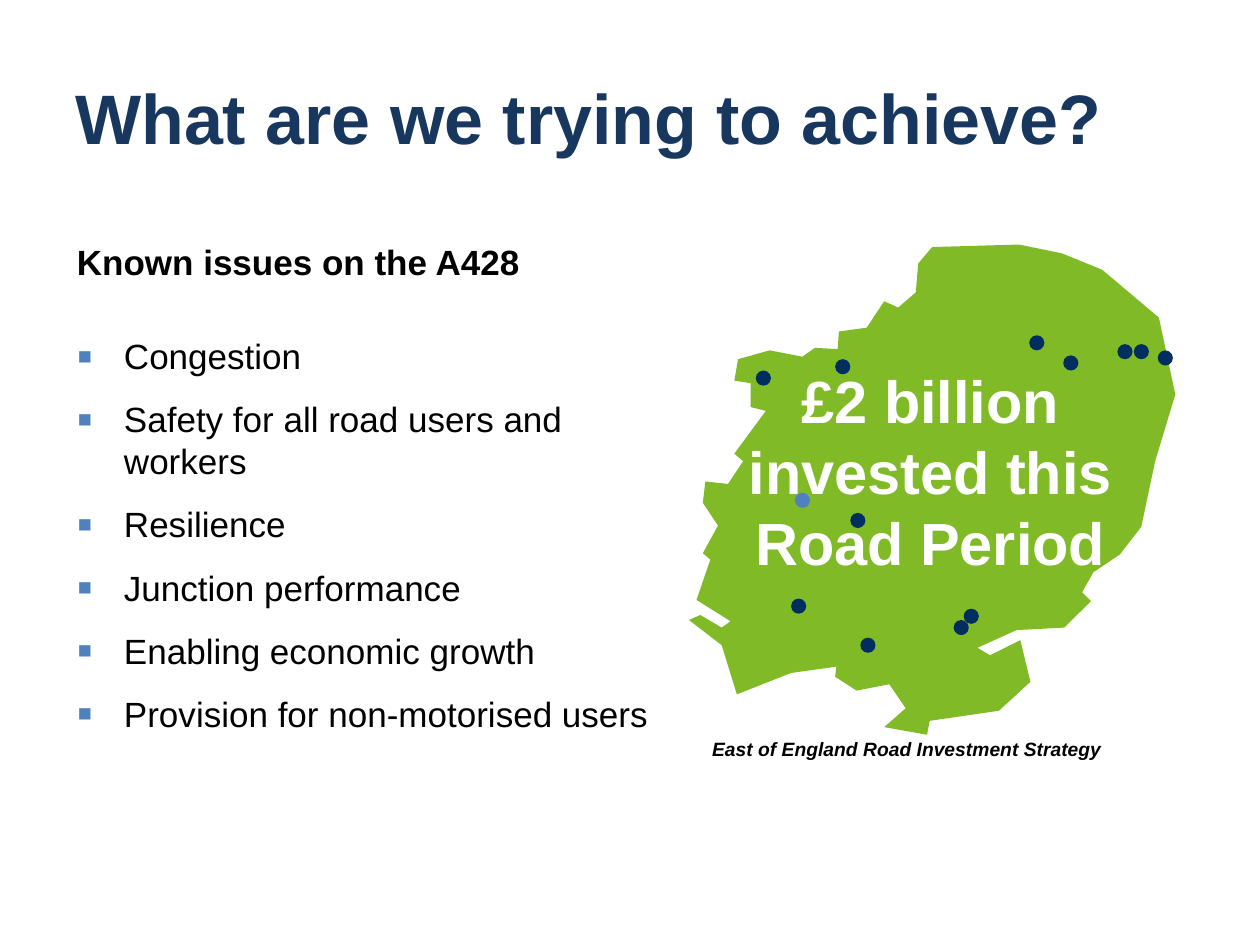
from lxml import etree
from pptx import Presentation
from pptx import util as u
from pptx.dml.color import RGBColor
from pptx.enum import shapes, text
from pptx.oxml.ns import qn

FONT = "Arial"
NAVY, BLUE, GREEN, DOT = "17375E", "4F81BD", "80BA27", "002E5F"
BLACK, WHITE = "000000", "FFFFFF"
UNIT = u.Cm(2.54) / 100

ISSUES = [
    "Congestion",
    "Safety for all road users and workers",
    "Resilience",
    "Junction performance",
    "Enabling economic growth",
    "Provision for non-motorised users",
]

OUTLINE = [
    (36, 108), (39, 91), (64, 84), (90, 89), (100, 82), (118, 83), (119, 69), (141, 66),
    (155, 45), (166, 50), (180, 38), (182, 15), (193, 2), (262, 0), (296, 7), (328, 20),
    (373, 58), (386, 119), (370, 172), (359, 224), (342, 246), (321, 260), (312, 276),
    (319, 283), (298, 304), (260, 306), (229, 320), (239, 326), (263, 314), (271, 347),
    (246, 370), (191, 378), (189, 389), (155, 383), (172, 368), (159, 349), (133, 354),
    (116, 343), (117, 335), (81, 340), (38, 357), (26, 318), (0, 298), (9, 294),
    (26, 304), (33, 299), (6, 282), (17, 250), (11, 245), (23, 223), (11, 205),
    (13, 188), (31, 190), (43, 172), (36, 166), (61, 132), (49, 129), (49, 110),
]

SCHEMES = [
    (270, 72), (340, 79), (353, 79), (372, 84), (297, 88), (116, 91), (53, 100),
    (128, 213), (136, 312), (81, 281), (210, 298), (218, 289),
]
A428 = (84, 197)


def color(value):
    """Turn a hex string into a colour."""
    return RGBColor.from_string(value)


def box(*lengths):
    """Turn centimetres into left, top, width and height."""
    return [u.Cm(n) for n in lengths]


def paint(sp, fill):
    """Give a shape a flat fill without line or shadow."""
    sp.shadow.inherit = False
    sp.fill.solid()
    sp.fill.fore_color.rgb = color(fill)
    sp.line.fill.background()


def write(p, words, size=20, fill=BLACK, bold=False, italic=False,
          align=text.PP_ALIGN.LEFT, before=0, after=0):
    """Write formatted text into a paragraph."""
    p.alignment = align
    p.space_before, p.space_after = u.Pt(before), u.Pt(after)
    r = p.add_run()
    r.text = words
    f = r.font
    f.name, f.size, f.bold, f.italic = FONT, u.Pt(size), bold, italic
    f.color.rgb = color(fill)


def add_frame(parent, area, anchor=text.MSO_ANCHOR.TOP, inset=None):
    """Add a wrapping text box and return its text frame."""
    tf = parent.add_textbox(*area).text_frame
    tf.word_wrap = True
    tf.vertical_anchor = anchor
    if inset is not None:
        tf.margin_left = tf.margin_right = tf.margin_top = tf.margin_bottom = inset
    return tf


def add_bullet(p):
    """Give a paragraph a hanging square bullet."""
    pPr = p._p.get_or_add_pPr()
    indent = u.Cm(0.95)
    pPr.set("marL", str(indent))
    pPr.set("indent", str(-indent))
    clr = etree.SubElement(pPr, qn("a:buClr"))
    etree.SubElement(clr, qn("a:srgbClr"), val=BLUE)
    etree.SubElement(pPr, qn("a:buSzPct"), val="130000")
    etree.SubElement(pPr, qn("a:buFont"), typeface=FONT)
    etree.SubElement(pPr, qn("a:buChar"), char="▪")


def add_title(s, area):
    """Place the slide title."""
    tf = add_frame(s.shapes, area, text.MSO_ANCHOR.MIDDLE)
    write(tf.paragraphs[0], "What are we trying to achieve?", size=40, fill=NAVY, bold=True)


def add_issues(s, area):
    """Place the heading and the bulleted issues."""
    tf = add_frame(s.shapes, area)
    write(tf.paragraphs[0], "Known issues on the A428", bold=True, after=24)
    for issue in ISSUES:
        p = tf.add_paragraph()
        add_bullet(p)
        write(p, issue, before=6, after=6)


def add_map(s, area):
    """Place the region outline with its message and scheme dots."""
    left, top = area[:2]
    parts = s.shapes.add_group_shape().shapes

    def spot(x, y, w, h):
        """Place a box measured in map units."""
        return [int(left + x * UNIT), int(top + y * UNIT), int(w * UNIT), int(h * UNIT)]

    fb = parts.build_freeform(*OUTLINE[0], scale=UNIT)
    fb.add_line_segments(OUTLINE[1:], close=True)
    paint(fb.convert_to_shape(left, top), GREEN)

    tf = add_frame(parts, spot(32, 95, 319, 169), text.MSO_ANCHOR.MIDDLE, u.Cm(0.1))
    write(tf.paragraphs[0], "£2 billion invested this Road Period", size=34, fill=WHITE,
          bold=True, align=text.PP_ALIGN.CENTER)

    for x, y in SCHEMES + [A428]:
        dot = parts.add_shape(shapes.MSO_SHAPE.OVAL, *spot(x, y, 12, 12))
        paint(dot, BLUE if (x, y) == A428 else DOT)


def add_caption(s, area):
    """Place the caption under the map."""
    tf = add_frame(s.shapes, area)
    write(tf.paragraphs[0], "East of England Road Investment Strategy", size=11,
          bold=True, italic=True, align=text.PP_ALIGN.CENTER)


def main():
    """Build the slide and save it."""
    prs = Presentation()
    prs.slide_width, prs.slide_height = u.Cm(25.4), u.Cm(19.05)
    s = prs.slides.add_slide(prs.slide_layouts[6])
    add_title(s, box(1.27, 0.76, 22.86, 3.18))
    add_map(s, box(13.89, 4.93, 9.8, 9.91))
    add_caption(s, box(13.69, 14.73, 9.19, 0.74))
    add_issues(s, box(1.3, 4.72, 12.19, 10.31))
    prs.save("out.pptx")


if __name__ == "__main__":
    main()
